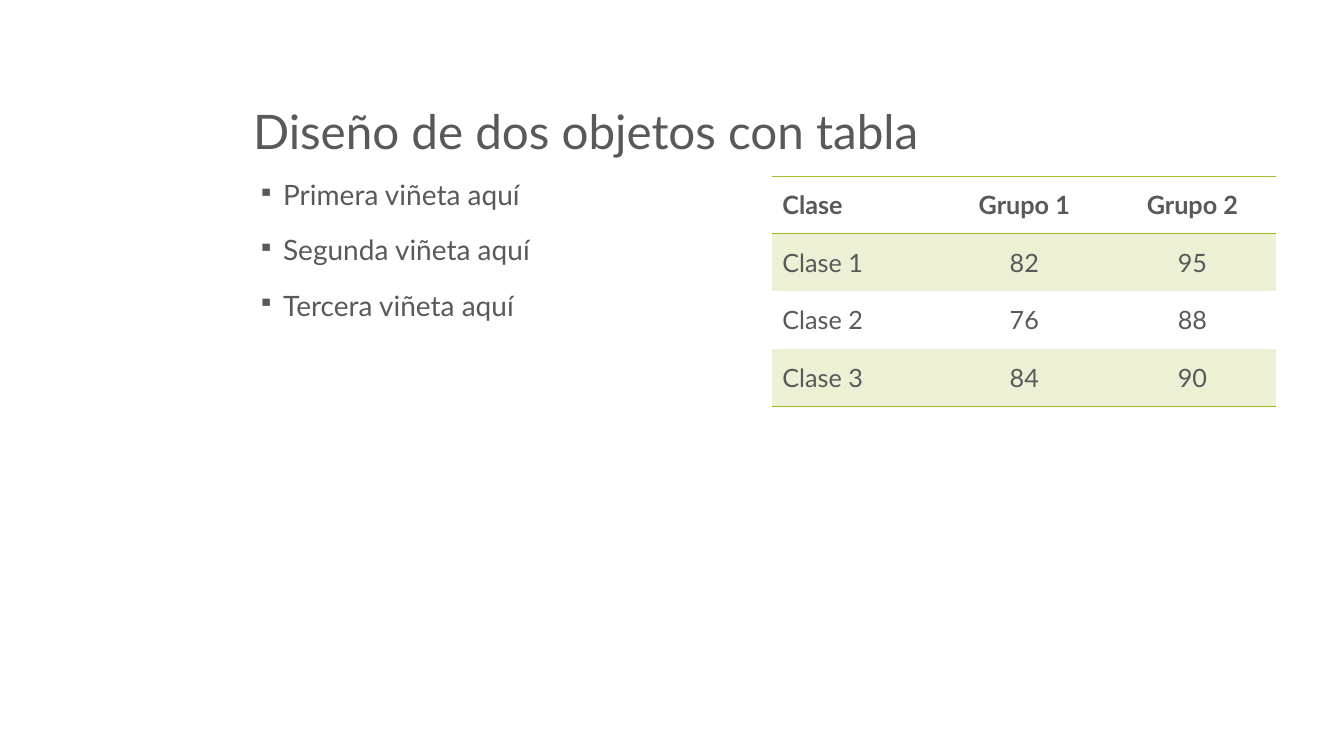
from lxml import etree
from pptx import Presentation
from pptx.dml.color import RGBColor
from pptx.enum.text import MSO_ANCHOR, PP_ALIGN
from pptx.oxml.ns import qn
from pptx.util import Inches, Pt

LEFT, CENTER = PP_ALIGN.LEFT, PP_ALIGN.CENTER
MIDDLE, BOTTOM = MSO_ANCHOR.MIDDLE, MSO_ANCHOR.BOTTOM

FONT = "Lato"
COLORS = {"text": "595959", "rule": "A6B727", "band": "EDF0D4"}

CONTENT_LEFT, CONTENT_TOP = 2.41, 1.75
CONTENT_WIDTH, COLUMN_WIDTH = 10.25, 5
TABLE_LEFT = CONTENT_LEFT + CONTENT_WIDTH - COLUMN_WIDTH
ROW_HEIGHT = 0.57

BULLETS = ["Primera viñeta aquí", "Segunda viñeta aquí", "Tercera viñeta aquí"]
ROWS = [
    ["Clase", "Grupo 1", "Grupo 2"],
    ["Clase 1", "82", "95"],
    ["Clase 2", "76", "88"],
    ["Clase 3", "84", "90"],
]


def add_run(paragraph, text, size, bold=False):
    run = paragraph.add_run()
    run.text = text
    run.font.name = FONT
    run.font.size = Pt(size)
    run.font.bold = bold
    run.font.color.rgb = RGBColor.from_string(COLORS["text"])


def set_borders(cell, ruled_sides):
    """Rule the named sides (T, B) of a cell and clear its other sides."""
    properties = cell._tc.get_or_add_tcPr()
    for side in "LRTB":
        line = etree.SubElement(properties, qn(f"a:ln{side}"), w=str(Pt(1)))
        if side in ruled_sides:
            fill = etree.SubElement(line, qn("a:solidFill"))
            etree.SubElement(fill, qn("a:srgbClr"), val=COLORS["rule"])
        else:
            etree.SubElement(line, qn("a:noFill"))


presentation = Presentation()
presentation.slide_width = Inches(13.33)
presentation.slide_height = Inches(7.5)
slide = presentation.slides.add_slide(presentation.slide_layouts[5])

# Title
title = slide.shapes.title
title.left, title.top = Inches(CONTENT_LEFT), Inches(0.33)
title.width, title.height = Inches(CONTENT_WIDTH), Inches(1.31)
title.text_frame.vertical_anchor = BOTTOM
title.text_frame.word_wrap = True
paragraph = title.text_frame.paragraphs[0]
paragraph.alignment = LEFT
paragraph.line_spacing = 0.9
add_run(paragraph, "Diseño de dos objetos con tabla", 34)

# Bullet list
bullet_box = slide.shapes.add_textbox(
    Inches(CONTENT_LEFT), Inches(CONTENT_TOP), Inches(COLUMN_WIDTH), Inches(4.5))
bullet_frame = bullet_box.text_frame
bullet_frame.word_wrap = True
for index, text in enumerate(BULLETS):
    paragraph = bullet_frame.add_paragraph() if index else bullet_frame.paragraphs[0]
    properties = paragraph._p.get_or_add_pPr()
    properties.set("marL", str(Inches(0.3)))
    properties.set("indent", str(Inches(-0.25)))
    etree.SubElement(properties, qn("a:buSzPct"), val="80000")
    etree.SubElement(properties, qn("a:buChar"), char="▪")
    paragraph.line_spacing = 0.9
    if index:
        paragraph.space_before = Pt(18)
    add_run(paragraph, text, 20)

# Table
table = slide.shapes.add_table(
    len(ROWS), len(ROWS[0]), Inches(TABLE_LEFT), Inches(CONTENT_TOP),
    Inches(COLUMN_WIDTH), Inches(ROW_HEIGHT * len(ROWS))).table
for row_index, values in enumerate(ROWS):
    is_header = row_index == 0
    is_last = row_index == len(ROWS) - 1
    ruled_sides = "TB" if is_header else "B" if is_last else ""
    # The header's lower rule is also the upper rule of the first data row
    if row_index == 1:
        ruled_sides = "T"
    for column_index, value in enumerate(values):
        cell = table.cell(row_index, column_index)
        cell.vertical_anchor = MIDDLE
        set_borders(cell, ruled_sides)
        if row_index % 2:
            cell.fill.solid()
            cell.fill.fore_color.rgb = RGBColor.from_string(COLORS["band"])
        else:
            cell.fill.background()
        paragraph = cell.text_frame.paragraphs[0]
        paragraph.alignment = CENTER if column_index else LEFT
        add_run(paragraph, value, 18, bold=is_header)

presentation.save("out.pptx")
